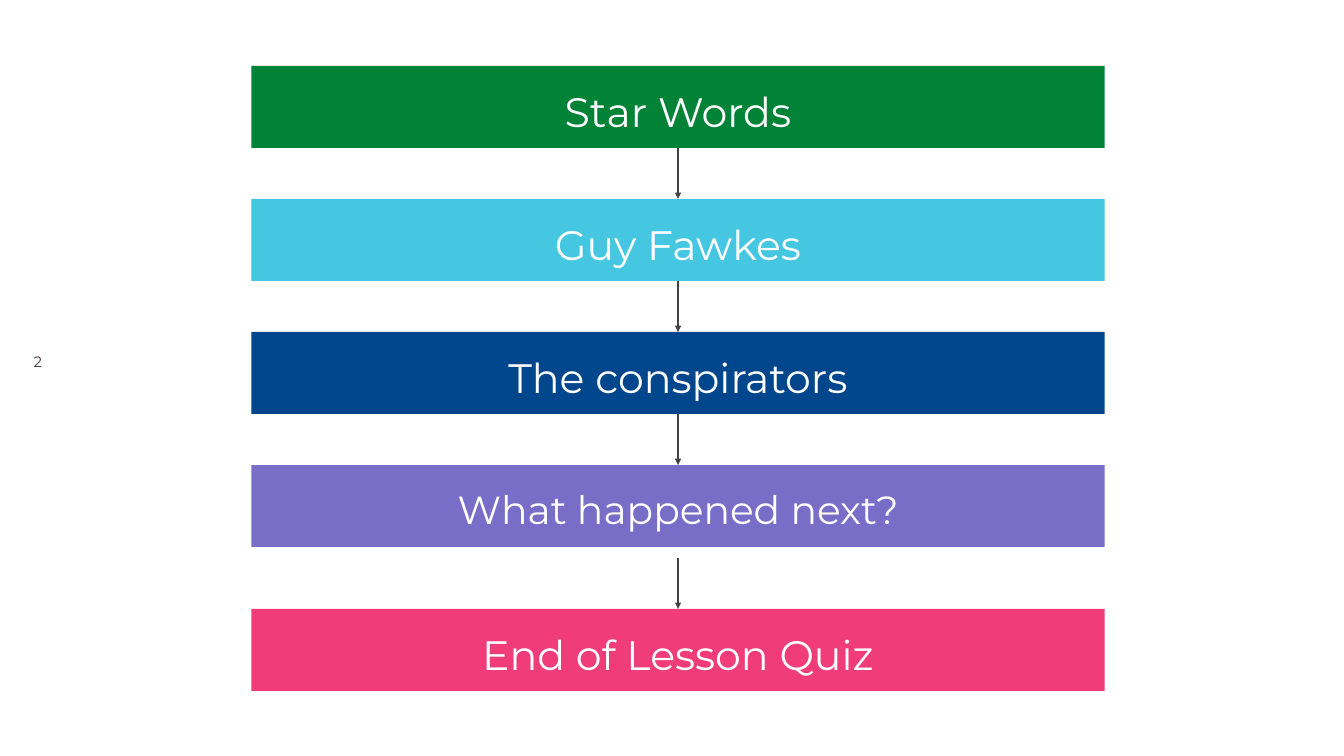
from lxml.etree import SubElement
from pptx import Presentation
from pptx.dml.color import RGBColor
from pptx.enum.shapes import MSO_CONNECTOR, MSO_SHAPE
from pptx.enum.text import MSO_ANCHOR, PP_ALIGN
from pptx.oxml.ns import qn
from pptx.util import Inches, Pt

STEPS = [
    ("Star Words", "008237", 44),
    ("Guy Fawkes", "46C7E1", 44),
    ("The conspirators", "00468C", 44),
    ("What happened next?", "786EC8", 42),
    ("End of Lesson Quiz", "F03C78", 44),
]
PAGE_NUMBER = "2"

FONT = "Montserrat"
SLIDE_WIDTH, SLIDE_HEIGHT = 20, 11.25
BAR_LEFT, BAR_TOP, BAR_WIDTH, BAR_HEIGHT = 3.74, 0.98, 12.7, 1.22
GAP = 0.76
QUIZ_EXTRA_GAP = 0.16
BAR_INSET = 0.2


def color(hex_string):
    return RGBColor.from_string(hex_string)


def write(shape, text, size, hex_string, inset, align, line_spacing):
    frame = shape.text_frame
    frame_format = {
        "word_wrap": True,
        "vertical_anchor": MSO_ANCHOR.TOP,
        "margin_left": Inches(inset),
        "margin_top": Inches(inset),
        "margin_right": Inches(inset),
        "margin_bottom": Inches(inset),
    }
    for name, value in frame_format.items():
        setattr(frame, name, value)
    paragraph = frame.paragraphs[0]
    paragraph.alignment = align
    paragraph.line_spacing = line_spacing
    run = paragraph.add_run()
    run.text = text
    for name, value in {"name": FONT, "size": Pt(size)}.items():
        setattr(run.font, name, value)
    run.font.color.rgb = color(hex_string)


def add_bar(slide, top, text, fill, size):
    bar = slide.shapes.add_shape(
        MSO_SHAPE.RECTANGLE,
        *map(Inches, (BAR_LEFT, top, BAR_WIDTH, BAR_HEIGHT)),
    )
    bar.shadow.inherit = False
    bar.fill.solid()
    bar.fill.fore_color.rgb = color(fill)
    bar.line.fill.background()
    write(bar, text, size, "FFFFFF", BAR_INSET, PP_ALIGN.CENTER, 1.15)


def add_arrow_down_to(slide, top):
    middle = BAR_LEFT + BAR_WIDTH / 2
    arrow = slide.shapes.add_connector(
        MSO_CONNECTOR.STRAIGHT,
        *map(Inches, (middle, top - GAP, middle, top)),
    )
    arrow.line.color.rgb = color("434343")
    arrow.line.width = Pt(2.25)
    SubElement(arrow.line._get_or_add_ln(), qn("a:tailEnd"), type="triangle")
    SubElement(arrow._element.spPr, qn("a:effectLst"))


def main():
    deck = Presentation()
    deck.slide_width = Inches(SLIDE_WIDTH)
    deck.slide_height = Inches(SLIDE_HEIGHT)
    slide = deck.slides.add_slide(deck.slide_layouts[6])

    for row, (text, fill, size) in enumerate(STEPS):
        top = BAR_TOP + row * (BAR_HEIGHT + GAP)
        if row == len(STEPS) - 1:
            top += QUIZ_EXTRA_GAP
        add_bar(slide, top, text, fill, size)
        if row:
            add_arrow_down_to(slide, top)

    page_number = slide.shapes.add_textbox(*map(Inches, (0.5, 5.24, 0.79, 0.2)))
    write(page_number, PAGE_NUMBER, 16, "4B3241", 0, PP_ALIGN.LEFT, 1.0)

    deck.save("out.pptx")


if __name__ == "__main__":
    main()
